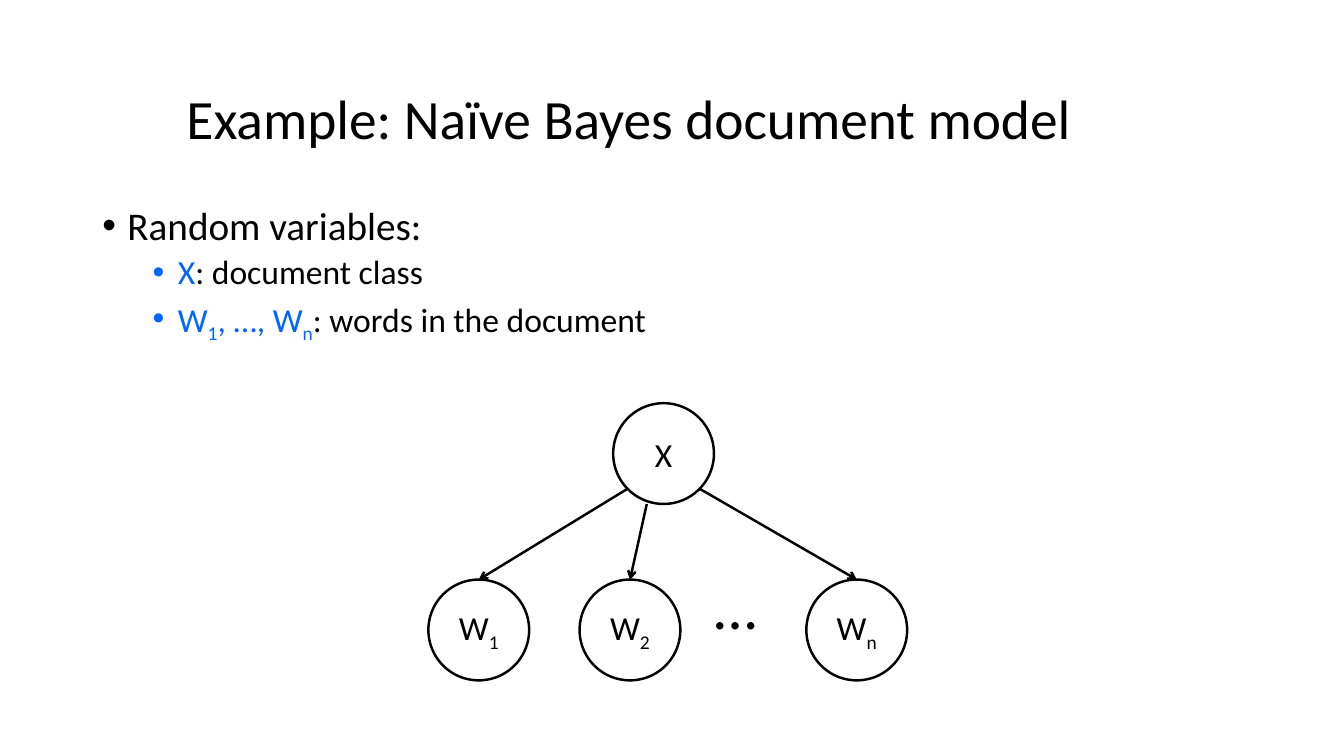
from lxml.etree import SubElement
from pptx import Presentation
from pptx.dml.color import RGBColor
from pptx.enum.shapes import MSO_CONNECTOR, MSO_SHAPE
from pptx.enum.text import MSO_ANCHOR, MSO_AUTO_SIZE, PP_ALIGN
from pptx.oxml.ns import qn
from pptx.util import Pt

COLORS = {"ink": "000000", "blue": "0066FF"}


def color(name):
    return RGBColor.from_string(COLORS[name])


def write(par, size, *parts):
    """Fill a paragraph from (text, colour) parts; "_" precedes a one-letter subscript."""
    par.font.name, par.font.size = "Calibri", Pt(size)
    for text, tint in parts:
        first, *rest = text.split("_")
        pieces = [(first, False)]
        for piece in rest:
            pieces += [(piece[0], True), (piece[1:], False)]
        for piece, sub in pieces:
            if piece:
                run = par.add_run()
                run.text = piece
                run.font.color.rgb = color(tint)
                if sub:
                    run.font._element.set("baseline", "-25000")


prs = Presentation()
prs.slide_width, prs.slide_height = Pt(960), Pt(540)
slide = prs.slides.add_slide(prs.slide_layouts[5])
shapes = slide.shapes

# Title
title = shapes.title
title.left, title.top, title.width, title.height = Pt(126), Pt(42), Pt(708), Pt(90)
frame = title.text_frame
frame.auto_size = MSO_AUTO_SIZE.NONE
frame.vertical_anchor = MSO_ANCHOR.MIDDLE
par = frame.paragraphs[0]
par.alignment = PP_ALIGN.LEFT
par.line_spacing = 0.9
write(par, 39.6, ("Example: Naïve Bayes document model", "ink"))

# Bulleted list of variables
frame = shapes.add_textbox(Pt(66), Pt(144), Pt(828), Pt(343)).text_frame
frame.word_wrap = True
items = [
    (0, 28, [("Random variables:", "ink")]),
    (1, 24, [("X", "blue"), (": document class", "ink")]),
    (1, 24, [("W_1, …, W_n", "blue"), (": words in the document", "ink")]),
]
for i, (level, size, parts) in enumerate(items):
    par = frame.add_paragraph() if i else frame.paragraphs[0]
    par.level = level
    par.line_spacing = 0.9
    par.space_before = Pt(5 if i else 0)
    props = par._p.get_or_add_pPr()
    props.set("marL", str(Pt(18 + 36 * level)))
    props.set("indent", str(Pt(-18)))
    tint = SubElement(props, qn("a:buClr"))
    SubElement(tint, qn("a:srgbClr"), val=COLORS[parts[0][1]])
    SubElement(props, qn("a:buFont"), typeface="Arial")
    SubElement(props, qn("a:buChar"), char="•")
    write(par, size, *parts)

# Nodes: the class above, the words below
SIDE = 72
nodes = [("W_1", 306, 414), ("W_2", 414, 414), ("W_n", 576, 414), ("X", 438, 288)]
for label, left, top in nodes:
    node = shapes.add_shape(MSO_SHAPE.OVAL, Pt(left), Pt(top), Pt(SIDE), Pt(SIDE))
    node.shadow.inherit = False
    node.fill.background()
    node.line.color.rgb = color("ink")
    node.line.width = Pt(1.75)
    frame = node.text_frame
    frame.vertical_anchor = MSO_ANCHOR.MIDDLE
    par = frame.paragraphs[0]
    par.alignment = PP_ALIGN.CENTER
    write(par, 24, (label, "ink"))

frame = shapes.add_textbox(Pt(503.5), Pt(402), Pt(101), Pt(60.5)).text_frame
frame.word_wrap = True
write(frame.paragraphs[0], 44, ("…", "ink"))

# Arrows from the class to the top of each word
starts = [(448.5, 349), (462, 360), (499.5, 349)]
for (x, y), (_, left, top) in zip(starts, nodes):
    arrow = shapes.add_connector(
        MSO_CONNECTOR.STRAIGHT, Pt(x), Pt(y), Pt(left + SIDE / 2), Pt(top))
    arrow.line.color.rgb = color("ink")
    arrow.line.width = Pt(1.75)
    SubElement(arrow.line._get_or_add_ln(), qn("a:tailEnd"), type="arrow")
    SubElement(arrow._element.spPr, qn("a:effectLst"))

prs.save("out.pptx")
